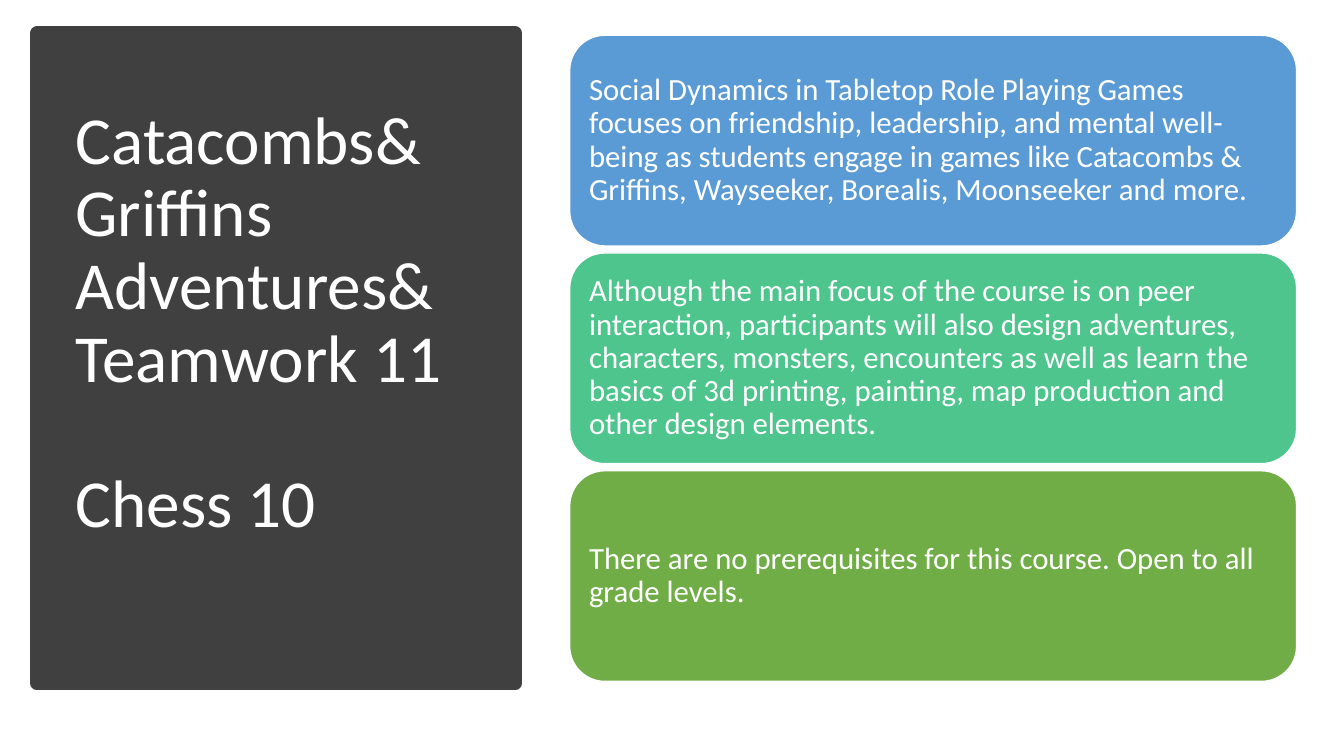
from pptx import Presentation
from pptx import util as u
from pptx.dml.color import RGBColor
from pptx.enum import shapes, text

FONT = "Calibri"
WHITE = "FFFFFF"
CHARCOAL = "404040"
CARDS = [
    ("5B9BD5", "Social Dynamics in Tabletop Role Playing Games focuses on friendship, "
               "leadership, and mental well-being as students engage in games like "
               "Catacombs & Griffins, Wayseeker, Borealis, Moonseeker and more."),
    ("4DC58D", "Although the main focus of the course is on peer interaction, participants "
               "will also design adventures, characters, monsters, encounters as well as "
               "learn the basics of 3d printing, painting, map production and other design "
               "elements."),
    ("70AD47", "There are no prerequisites for this course. Open to all grade levels."),
]


def color(hex_string):
    return RGBColor.from_string(hex_string)


def add_box(slide, kind, box, fill, line, line_width):
    shape = slide.shapes.add_shape(kind, *(u.Inches(length) for length in box))
    shape.shadow.inherit = False
    shape.fill.solid()
    shape.fill.fore_color.rgb = color(fill)
    shape.line.color.rgb = color(line)
    shape.line.width = u.Pt(line_width)
    return shape


def format_text(text_frame, size):
    text_frame.word_wrap = True
    text_frame.auto_size = text.MSO_AUTO_SIZE.NONE
    text_frame.vertical_anchor = text.MSO_ANCHOR.MIDDLE
    for paragraph in text_frame.paragraphs:
        paragraph.alignment = text.PP_ALIGN.LEFT
        paragraph.line_spacing = 0.9
        for run in paragraph.runs:
            run.font.name = FONT
            run.font.size = u.Pt(size)
            run.font.color.rgb = color(WHITE)


def add_title_panel(slide, left, top, width, height):
    # Dark panel behind the title
    panel = add_box(slide, shapes.MSO_SHAPE.RECTANGLE, (left, top, width, height),
                    CHARCOAL, CHARCOAL, 10)

    # Title placeholder, raised above the panel
    title = slide.shapes.title
    panel._element.addnext(title._element)
    title.left, title.top = u.Inches(left + 0.28), u.Inches(top + 0.37)
    title.width, title.height = u.Inches(width - 0.58), u.Inches(height - 0.7)
    title.text_frame.text = "Catacombs& Griffins Adventures& Teamwork 11\nChess 10"
    format_text(title.text_frame, 48)
    title.text_frame.paragraphs[1].space_before = u.Pt(52)
    title.text_frame.margin_bottom = u.Inches(0.77)


def add_cards(slide, left, top, width, height, gap=0.07):
    card_height = (height - gap * (len(CARDS) - 1)) / len(CARDS)
    for index, (fill, wording) in enumerate(CARDS):
        card_top = top + index * (card_height + gap)
        card = add_box(slide, shapes.MSO_SHAPE.ROUNDED_RECTANGLE,
                       (left, card_top, width, card_height), fill, WHITE, 1)
        frame = card.text_frame
        frame.text = wording
        frame.margin_left = frame.margin_right = u.Inches(0.09)
        frame.margin_top = frame.margin_bottom = u.Inches(0.09)
        format_text(frame, 22)


def main():
    presentation = Presentation()
    presentation.slide_width = u.Inches(13.33)
    presentation.slide_height = u.Inches(7.5)
    slide = presentation.slides.add_slide(presentation.slide_layouts[5])
    add_title_panel(slide, 0.37, 0.33, 4.74, 6.45)
    add_cards(slide, 5.65, 0.35, 7.21, 6.41)
    presentation.save("out.pptx")


if __name__ == "__main__":
    main()
